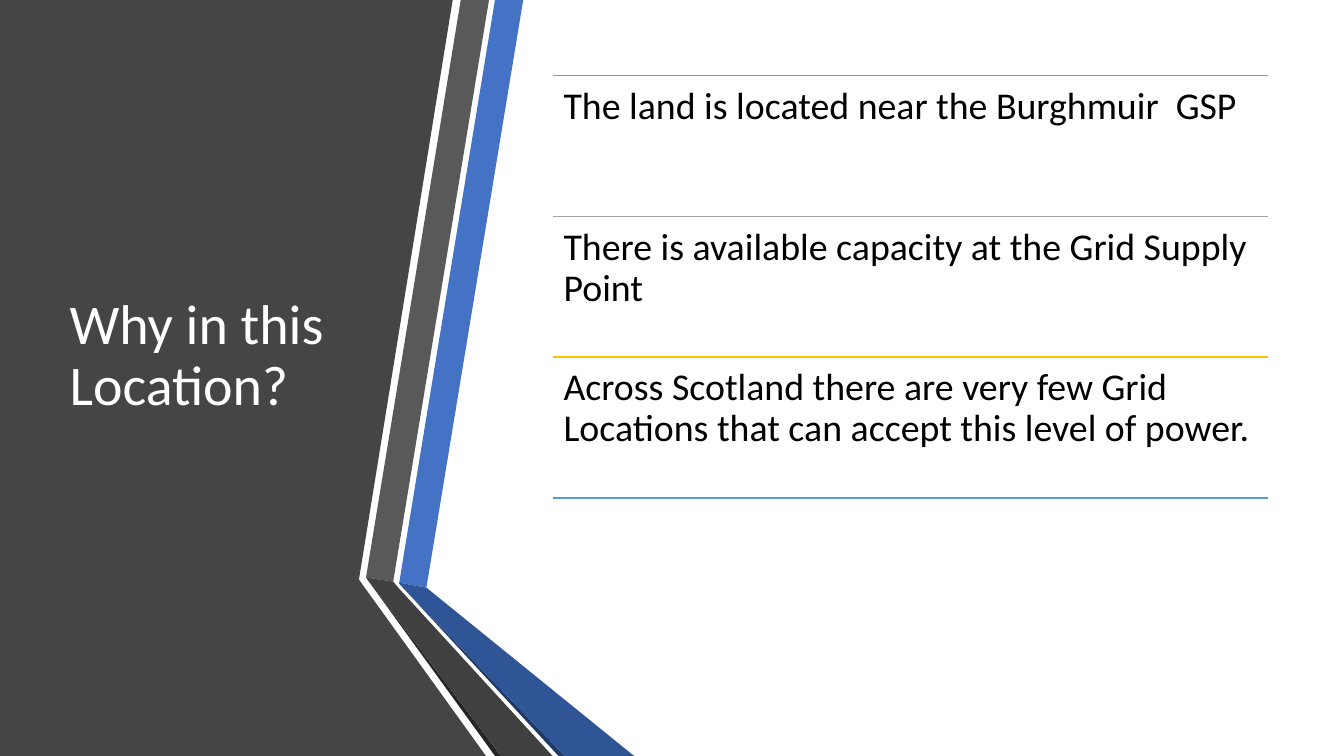
"""Build the slide that explains the choice of location."""
from dataclasses import dataclass

import pptx
import pptx.dml.color
import pptx.enum.shapes
import pptx.enum.text
import pptx.oxml.ns
import pptx.slide
import pptx.text.text
import pptx.util
from lxml import etree

Inches = pptx.util.Inches
RGBColor = pptx.dml.color.RGBColor
Anchor = pptx.enum.text.MSO_ANCHOR

FONT = "Calibri"
WHITE = RGBColor(0xFF, 0xFF, 0xFF)
BLACK = RGBColor(0x00, 0x00, 0x00)
CHARCOAL = RGBColor(0x45, 0x45, 0x45)
GRAY = RGBColor(0x59, 0x59, 0x59)
DARK_GRAY = RGBColor(0x40, 0x40, 0x40)
GRAY_EDGE = RGBColor(0x26, 0x26, 0x26)
BLUE = RGBColor(0x44, 0x72, 0xC4)
DARK_BLUE = RGBColor(0x2F, 0x55, 0x97)
BLUE_EDGE = RGBColor(0x20, 0x38, 0x64)
ORANGE = RGBColor(0xED, 0x7D, 0x31)
SILVER = RGBColor(0xA5, 0xA5, 0xA5)
GOLD = RGBColor(0xFF, 0xC0, 0x00)
SKY = RGBColor(0x5B, 0x9B, 0xD5)

LIST_LEFT, LIST_RIGHT = 5.48, 12.58
LIST_TOP, LIST_BOTTOM = 0.75, 4.94


@dataclass(frozen=True)
class Polygon:
    """A filled outline with corners in inches."""
    color: RGBColor
    corners: tuple[tuple[float, float], ...]


@dataclass(frozen=True)
class Reason:
    """A statement under a coloured rule."""
    text: str
    color: RGBColor


POLYGONS = (
    Polygon(CHARCOAL, ((0, 0), (4.49, 0), (3.56, 5.75), (4.82, 7.5), (0, 7.5))),
    Polygon(BLUE, ((3.96, 5.78), (4.23, 5.83), (5.19, 0), (4.91, 0))),
    Polygon(GRAY, ((4.85, 0), (4.57, 0), (3.63, 5.73), (3.9, 5.77))),
    Polygon(GRAY_EDGE, ((3.63, 5.73), (4.91, 7.5), (4.97, 7.5))),
    Polygon(BLUE_EDGE, ((3.96, 5.79), (5.54, 7.5), (5.6, 7.5))),
    Polygon(DARK_BLUE, ((3.96, 5.78), (3.96, 5.79), (5.6, 7.5), (6.29, 7.5), (4.23, 5.83))),
    Polygon(DARK_GRAY, ((3.63, 5.73), (4.97, 7.5), (5.48, 7.5), (3.95, 5.83), (3.9, 5.77))),
)

REASONS = (
    Reason("The land is located near the Burghmuir  GSP", ORANGE),
    Reason("There is available capacity at the Grid Supply Point", SILVER),
    Reason("Across Scotland there are very few Grid Locations that can accept this level of power.", GOLD),
)


def write_text(frame: pptx.text.text.TextFrame, text: str, *, size: float, color: RGBColor,
               anchor: Anchor, inset: float) -> None:
    """Fill a text frame with one formatted paragraph."""
    frame.word_wrap = True
    frame.auto_size = pptx.enum.text.MSO_AUTO_SIZE.NONE
    frame.vertical_anchor = anchor
    frame.margin_left = frame.margin_right = Inches(inset)
    frame.margin_top = frame.margin_bottom = Inches(inset)
    paragraph = frame.paragraphs[0]
    paragraph.alignment = pptx.enum.text.PP_ALIGN.LEFT
    paragraph.line_spacing = 0.9
    run = paragraph.add_run()
    run.text = text
    run.font.name = FONT
    run.font.size = pptx.util.Pt(size)
    run.font.color.rgb = color


def draw_polygon(slide: pptx.slide.Slide, polygon: Polygon) -> None:
    """Draw a filled outline without a border."""
    start, *others = [(Inches(x), Inches(y)) for x, y in polygon.corners]
    builder = slide.shapes.build_freeform(*start)
    builder.add_line_segments(others, close=True)
    shape = builder.convert_to_shape()
    shape.shadow.inherit = False
    shape.fill.solid()
    shape.fill.fore_color.rgb = polygon.color
    shape.line.fill.background()


def draw_rule(slide: pptx.slide.Slide, top: float, color: RGBColor) -> None:
    """Draw a horizontal rule across the list."""
    rule = slide.shapes.add_connector(
        pptx.enum.shapes.MSO_CONNECTOR.STRAIGHT,
        Inches(LIST_LEFT), Inches(top), Inches(LIST_RIGHT), Inches(top))
    rule.line.color.rgb = color
    rule.line.width = pptx.util.Pt(1)
    etree.SubElement(rule._element.spPr, pptx.oxml.ns.qn("a:effectLst"))


def draw_title(slide: pptx.slide.Slide) -> None:
    """Place the title in front of the dark panel."""
    title = slide.shapes.title
    title.left, title.top = Inches(0.59), Inches(0.75)
    title.width, title.height = Inches(3.04), Inches(5.58)
    write_text(title.text_frame, "Why in this Location?", size=40, color=WHITE,
               anchor=Anchor.MIDDLE, inset=0.1)
    slide.shapes._spTree.append(title._element)


def draw_reasons(slide: pptx.slide.Slide) -> None:
    """Draw evenly spaced reasons and the closing rule."""
    pitch = (LIST_BOTTOM - LIST_TOP) / len(REASONS)
    for index, reason in enumerate(REASONS):
        top = LIST_TOP + index * pitch
        draw_rule(slide, top, reason.color)
        box = slide.shapes.add_textbox(
            Inches(LIST_LEFT), Inches(top), Inches(LIST_RIGHT - LIST_LEFT), Inches(pitch))
        write_text(box.text_frame, reason.text, size=27, color=BLACK,
                   anchor=Anchor.TOP, inset=0.11)
    draw_rule(slide, LIST_BOTTOM, SKY)


def main() -> None:
    """Build and save the presentation."""
    presentation = pptx.Presentation()
    presentation.slide_width = Inches(13.33)
    presentation.slide_height = Inches(7.5)
    slide = presentation.slides.add_slide(presentation.slide_layouts.get_by_name("Title Only"))
    for polygon in POLYGONS:
        draw_polygon(slide, polygon)
    draw_title(slide)
    draw_reasons(slide)
    presentation.save("out.pptx")


if __name__ == "__main__":
    main()
